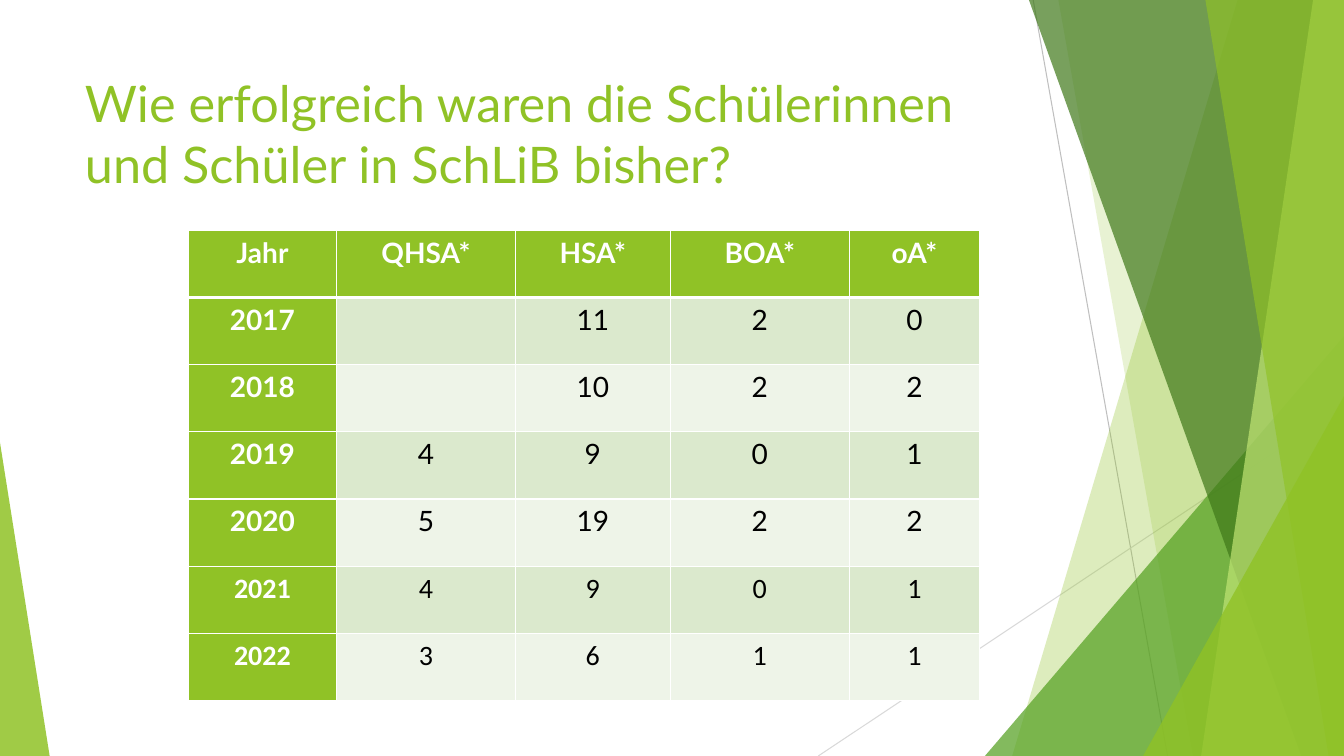
from dataclasses import dataclass

from lxml import etree
from pptx import Presentation
from pptx.dml.color import RGBColor
from pptx.enum import shapes, text
from pptx.oxml.ns import qn
from pptx.util import Pt


@dataclass(frozen=True)
class Theme:
    green: str = "90C226"
    mid_green: str = "54A021"
    dark_green: str = "3F7819"
    lime: str = "C0E474"
    band_dark: str = "DBE9CD"
    band_light: str = "EEF4E8"
    white: str = "FFFFFF"
    black: str = "000000"
    grey: str = "BFBFBF"
    light_grey: str = "D9D9D9"
    font: str = "Lato"
    late_font: str = "Calibri"
    title_size: float = 36
    table_size: float = 20


class SlideBuilder:
    def __init__(self, slide, theme):
        self.slide = slide
        self.shapes = slide.shapes
        self.theme = theme

    def _fill(self, sp, color, opacity):
        sp.shadow.inherit = False
        sp.line.fill.background()
        sp.fill.solid()
        sp.fill.fore_color.rgb = RGBColor.from_string(color)
        clr = sp.fill._xPr.find(qn("a:solidFill"))[0]
        etree.SubElement(clr, qn("a:alpha"), val=str(opacity * 1000))

    def _format(self, p, font, size, color, bold=False):
        for r in p.runs:
            r.font.name = font
            r.font.size = Pt(size)
            r.font.bold = bold
            r.font.color.rgb = RGBColor.from_string(color)

    def line(self, x1, y1, x2, y2, color):
        cn = self.shapes.add_connector(
            shapes.MSO_CONNECTOR.STRAIGHT, Pt(x1), Pt(y1), Pt(x2), Pt(y2))
        cn.line.color.rgb = RGBColor.from_string(color)
        cn.line.width = Pt(0.75)
        etree.SubElement(cn._element.spPr, qn("a:effectLst"))

    def shard(self, top_x, bottom_x, color, opacity):
        """Full-height band from a slanted left edge to the slide's right edge."""
        fb = self.shapes.build_freeform(Pt(top_x), 0)
        fb.add_line_segments(
            [(Pt(960), 0), (Pt(960), Pt(540)), (Pt(bottom_x), Pt(540))], close=True)
        self._fill(fb.convert_to_shape(), color, opacity)

    def triangle(self, x, y, w, apex, color, opacity):
        """Triangle standing on the bottom edge of the slide."""
        sp = self.shapes.add_shape(
            shapes.MSO_SHAPE.ISOSCELES_TRIANGLE, Pt(x), Pt(y), Pt(w), Pt(540 - y))
        sp.adjustments[0] = apex
        self._fill(sp, color, opacity)

    def title(self, words, x, y, w, h):
        sp = self.shapes.title
        sp.left, sp.top, sp.width, sp.height = Pt(x), Pt(y), Pt(w), Pt(h)
        tf = sp.text_frame
        tf.text = words
        tf.word_wrap = True
        tf.auto_size = text.MSO_AUTO_SIZE.NONE
        tf.vertical_anchor = text.MSO_ANCHOR.TOP
        p = tf.paragraphs[0]
        p.alignment = text.PP_ALIGN.LEFT
        p.line_spacing = 1.0
        p.space_before = Pt(0)
        self._format(p, self.theme.font, self.theme.title_size, self.theme.green)
        # Bring the title in front of the decoration
        self.shapes._spTree.append(sp._element)

    def _borders(self, cell, top, bottom):
        tc_pr = cell._tc.get_or_add_tcPr()
        for side, width in (("L", 1), ("R", 1), ("T", top), ("B", bottom)):
            ln = etree.SubElement(tc_pr, qn(f"a:ln{side}"), w=str(Pt(width)))
            fill = etree.SubElement(ln, qn("a:solidFill"))
            etree.SubElement(fill, qn("a:srgbClr"), val=self.theme.white)

    def table(self, rows, x, y, col_widths, row_height, late_row):
        t = self.theme
        frame = self.shapes.add_table(
            len(rows), len(col_widths), Pt(x), Pt(y),
            Pt(sum(col_widths)), Pt(row_height * len(rows)))
        table = frame.table
        table.first_col = True
        for column, width in zip(table.columns, col_widths):
            column.width = Pt(width)
        for i, values in enumerate(rows):
            table.rows[i].height = Pt(row_height)
            band = t.band_dark if i % 2 else t.band_light
            font = t.late_font if i >= late_row else t.font
            for j, value in enumerate(values):
                cell = table.cell(i, j)
                heading = i == 0 or j == 0
                self._borders(cell, 3 if i == 1 else 1, 3 if i == 0 else 1)
                cell.fill.solid()
                cell.fill.fore_color.rgb = RGBColor.from_string(
                    t.green if heading else band)
                cell.margin_left = cell.margin_right = Pt(5)
                cell.margin_top = cell.margin_bottom = 0
                p = cell.text_frame.paragraphs[0]
                p.text = value
                p.alignment = text.PP_ALIGN.CENTER
                p.line_spacing = 1.15
                p.space_after = Pt(10)
                self._format(p, font, t.table_size,
                             t.white if heading else t.black, heading)


RESULTS = [
    ["Jahr", "QHSA*", "HSA*", "BOA*", "oA*"],
    ["2017", "", "11", "2", "0"],
    ["2018", "", "10", "2", "2"],
    ["2019", "4", "9", "0", "1"],
    ["2020", "5", "19", "2", "2"],
    ["2021", "4", "9", "0", "1"],
    ["2022", "3", "6", "1", "1"],
]


def main():
    prs = Presentation()
    prs.slide_width, prs.slide_height = Pt(960), Pt(540)
    theme = Theme()
    s = SlideBuilder(prs.slides.add_slide(prs.slide_layouts[5]), theme)

    # Decoration, back to front
    s.line(738, 0, 834, 540, theme.grey)
    s.line(960, 290, 584.5, 540, theme.light_grey)
    s.shard(884, 723, theme.green, 30)
    s.shard(756, 852, theme.green, 20)
    s.triangle(703.5, 240, 256.5, 1, theme.mid_green, 72)
    s.shard(735, 929.5, theme.dark_green, 70)
    s.shard(938, 858, theme.lime, 70)
    s.shard(861, 949, theme.green, 65)
    s.triangle(816.5, 283, 143.5, 1, theme.green, 80)
    s.triangle(0, 316, 35.5, 0, theme.green, 85)

    # Title
    s.title("Wie erfolgreich waren die Schülerinnen und Schüler in SchLiB bisher?",
            53.5, 48, 677, 104)

    # Results by year
    s.table(RESULTS, 134.75, 164.5, [105.5, 128, 110.5, 128, 93], 48, late_row=5)

    prs.save("out.pptx")


if __name__ == "__main__":
    main()
